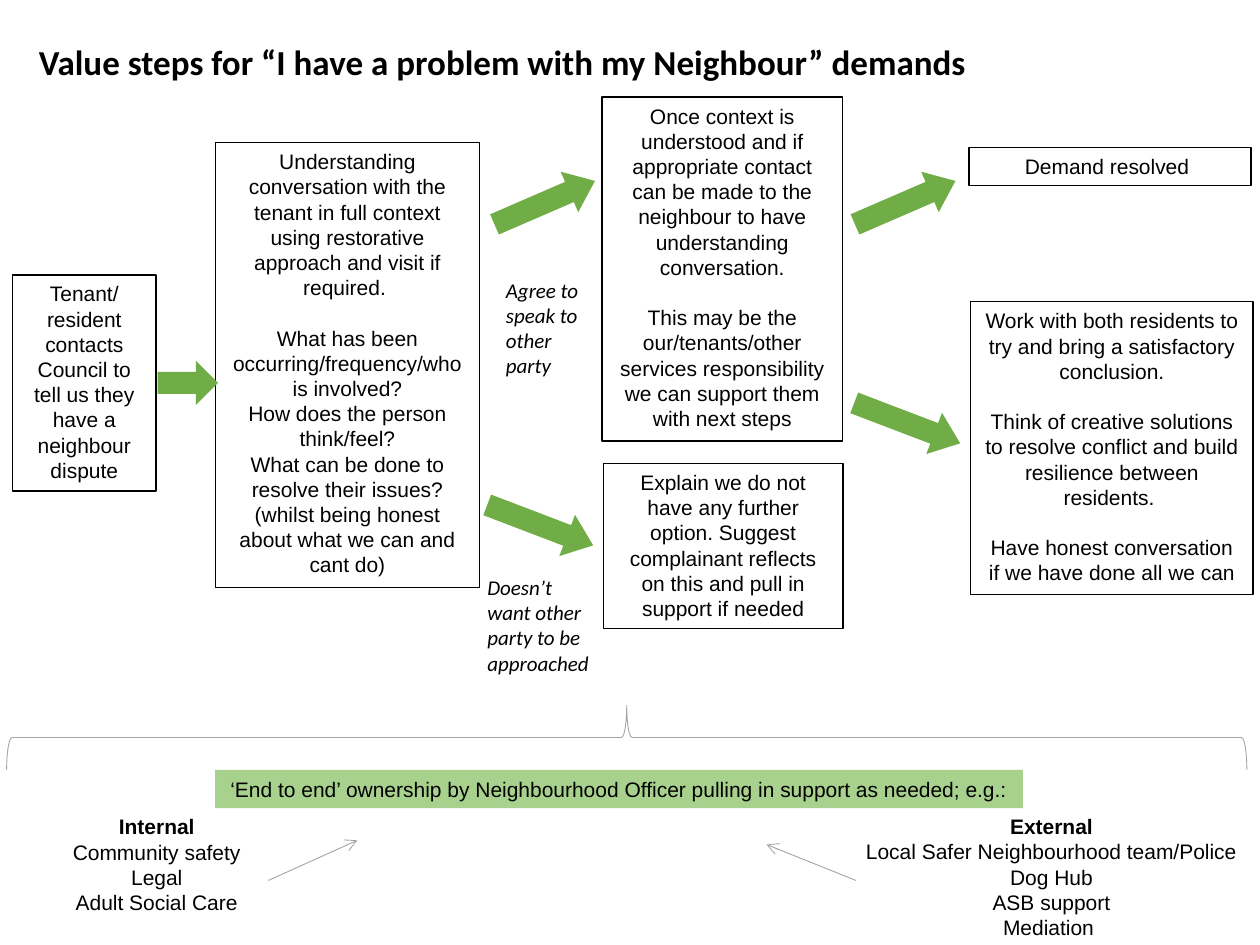
from typing import NamedTuple, Optional

from lxml.etree import SubElement
from pptx import Presentation
from pptx.dml.color import RGBColor
from pptx.enum.shapes import MSO_CONNECTOR, MSO_SHAPE
from pptx.enum.text import MSO_ANCHOR, MSO_AUTO_SIZE, PP_ALIGN
from pptx.oxml.ns import qn
from pptx.util import Pt

BLACK = RGBColor(0, 0, 0)
GREY = RGBColor(0xA5, 0xA5, 0xA5)
GREEN = RGBColor(0x70, 0xAD, 0x47)
PALE_GREEN = RGBColor(0xA9, 0xD1, 0x8E)
TEXT_SIZE = 12
BLANK_LINE = 14.4


class Area(NamedTuple):
    left: float
    top: float
    width: float
    height: float


class Step(NamedTuple):
    area: Area
    sections: list[list[str]]
    border: float = 0.75
    fill: Optional[RGBColor] = None
    wrap: bool = True


class Label(NamedTuple):
    area: Area
    text: str
    size: float = TEXT_SIZE
    bold: bool = False
    italic: bool = True


class Support(NamedTuple):
    area: Area
    heading: str
    sources: list[str]
    wrap: bool = True


class Arrow(NamedTuple):
    area: Area
    rotation: float = 0
    head: float = 0.5


class Pointer(NamedTuple):
    start: tuple[float, float]
    end: tuple[float, float]


STEPS = [
    Step(Area(7.2, 157, 82, 123.8),
         [["Tenant/", "resident contacts Council to tell us they have a neighbour dispute"]], border=1),
    Step(Area(123, 81.4, 151.2, 254.2), [
        ["Understanding conversation with the tenant in full context using restorative "
         "approach and visit if required. "],
        ["What has been occurring/frequency/who is involved?",
         "How does the person think/feel?",
         "What can be done to resolve their issues? (whilst being honest about what we can and cant do)"],
    ]),
    Step(Area(344, 55.4, 137.5, 196.6), [
        ["Once context is understood and if appropriate contact can be made to the neighbour "
         "to have understanding conversation."],
        ["This may be the our/tenants/other services responsibility we can support them with next steps"],
    ]),
    Step(Area(344.9, 264.7, 136.8, 94.6), [
        ["Explain we do not have any further option. Suggest complainant reflects on this "
         "and pull in support if needed"],
    ]),
    Step(Area(553.7, 84.3, 161.3, 21.8), [["Demand resolved "]]),
    Step(Area(554.8, 172.5, 161.3, 167.2), [
        ["Work with both residents to try and bring a satisfactory conclusion."],
        ["Think of creative solutions to resolve conflict and build resilience between residents. "],
        ["Have honest conversation if we have done all we can"],
    ]),
    Step(Area(123, 440, 461.5, 21.8),
         [["‘End to end’ ownership by Neighbourhood Officer pulling in support as needed; e.g.:"]],
         border=0, fill=PALE_GREEN, wrap=False),
]

LABELS = [
    Label(Area(15.1, 19.4, 571.7, 31.5),
          "Value steps for “I have a problem with my Neighbour” demands", 20, True, False),
    Label(Area(282, 154.8, 63.4, 65.4), "Agree to speak to other party"),
    Label(Area(271.4, 324.7, 73.4, 65.4), "Doesn’t want other party to be approached"),
]

SUPPORTS = [
    Support(Area(33.8, 461.5, 111.6, 65.4), "Internal",
            ["Community safety", "Legal", "Adult Social Care"], wrap=False),
    Support(Area(481.7, 461.5, 238.3, 94.5), "External",
            ["Local Safer Neighbourhood team/Police", "Dog Hub", "ASB support", "Mediation "]),
]

RISING, FALLING, LONG_HEAD = 336.6, 20.9, 0.63
ARROWS = [
    Arrow(Area(90, 206.2, 34.6, 25.2)),
    Arrow(Area(280, 103.2, 62.6, 25.2), RISING, LONG_HEAD),
    Arrow(Area(486, 103.2, 62.6, 25.2), RISING, LONG_HEAD),
    Arrow(Area(276.3, 287.5, 64.8, 25.2), FALLING, LONG_HEAD),
    Arrow(Area(486, 229.2, 64.8, 25.2), FALLING, LONG_HEAD),
]

POINTERS = [
    Pointer((153.4, 503.1), (204.2, 480.2)),
    Pointer((489.1, 503.1), (438, 482.6)),
]

BRACE = Area(339.8, 67.1, 36.7, 708.7)


def points(area: Area) -> list[Pt]:
    """Convert an area into lengths for python-pptx."""
    return [Pt(length) for length in area]


def prepare(frame, wrap: bool) -> None:
    """Let a text frame start at the top and grow with its text."""
    frame.word_wrap = wrap
    frame.auto_size = MSO_AUTO_SIZE.SHAPE_TO_FIT_TEXT
    frame.vertical_anchor = MSO_ANCHOR.TOP


def write(frame, index: int, text: str, face: str = "Arial", size: float = TEXT_SIZE,
          bold: bool = False, italic: bool = False, align=PP_ALIGN.CENTER):
    """Write one paragraph of a frame and return it."""
    paragraph = frame.add_paragraph() if index else frame.paragraphs[0]
    paragraph.text = text
    paragraph.alignment = align
    font = paragraph.font
    font.name, font.size, font.bold, font.italic = face, Pt(size), bold, italic
    font.color.rgb = BLACK
    return paragraph


def draw_step(slide, step: Step) -> None:
    """Draw a process box with its sections of text."""
    box = slide.shapes.add_shape(MSO_SHAPE.RECTANGLE, *points(step.area))
    box.shadow.inherit = False
    if step.fill is None:
        box.fill.background()
    else:
        box.fill.solid()
        box.fill.fore_color.rgb = step.fill
    if step.border:
        box.line.color.rgb = BLACK
        box.line.width = Pt(step.border)
    else:
        box.line.fill.background()
    prepare(box.text_frame, step.wrap)
    index = 0
    for section in step.sections:
        for position, text in enumerate(section):
            paragraph = write(box.text_frame, index, text)
            if index and position == 0:
                paragraph.space_before = Pt(BLANK_LINE)
            index += 1


def draw_label(slide, label: Label) -> None:
    """Draw the title or a note beside an arrow."""
    frame = slide.shapes.add_textbox(*points(label.area)).text_frame
    prepare(frame, True)
    write(frame, 0, label.text, "Calibri", label.size, label.bold, label.italic, PP_ALIGN.LEFT)


def draw_support(slide, support: Support) -> None:
    """Draw a heading with the sources of support below it."""
    frame = slide.shapes.add_textbox(*points(support.area)).text_frame
    prepare(frame, support.wrap)
    for index, text in enumerate([support.heading, *support.sources]):
        write(frame, index, text, bold=index == 0)


def draw_arrow(slide, arrow: Arrow) -> None:
    """Draw a green block arrow between steps."""
    block = slide.shapes.add_shape(MSO_SHAPE.RIGHT_ARROW, *points(arrow.area))
    block.shadow.inherit = False
    block.adjustments[1] = arrow.head
    block.rotation = arrow.rotation
    block.fill.solid()
    block.fill.fore_color.rgb = GREEN
    block.line.fill.background()


def draw_brace(slide, area: Area) -> None:
    """Draw the brace that spans all steps."""
    brace = slide.shapes.add_shape(MSO_SHAPE.RIGHT_BRACE, *points(area))
    brace.shadow.inherit = False
    brace.rotation = 270
    brace.fill.background()
    brace.line.color.rgb = GREY
    brace.line.width = Pt(0.5)


def draw_pointer(slide, pointer: Pointer) -> None:
    """Draw a thin line with an open arrowhead."""
    line = slide.shapes.add_connector(
        MSO_CONNECTOR.STRAIGHT, *(Pt(length) for length in pointer.start + pointer.end))
    line.line.color.rgb = GREY
    line.line.width = Pt(0.5)
    SubElement(line.line._get_or_add_ln(), qn("a:tailEnd"), type="arrow")
    SubElement(line._element.spPr, qn("a:effectLst"))


def main() -> None:
    """Build the slide and save it."""
    presentation = Presentation()
    presentation.slide_width, presentation.slide_height = Pt(720), Pt(540)
    slide = presentation.slides.add_slide(presentation.slide_layouts[6])
    draw_brace(slide, BRACE)
    for draw, items in ((draw_step, STEPS), (draw_label, LABELS), (draw_support, SUPPORTS),
                        (draw_arrow, ARROWS), (draw_pointer, POINTERS)):
        for item in items:
            draw(slide, item)
    presentation.save("out.pptx")


if __name__ == "__main__":
    main()
